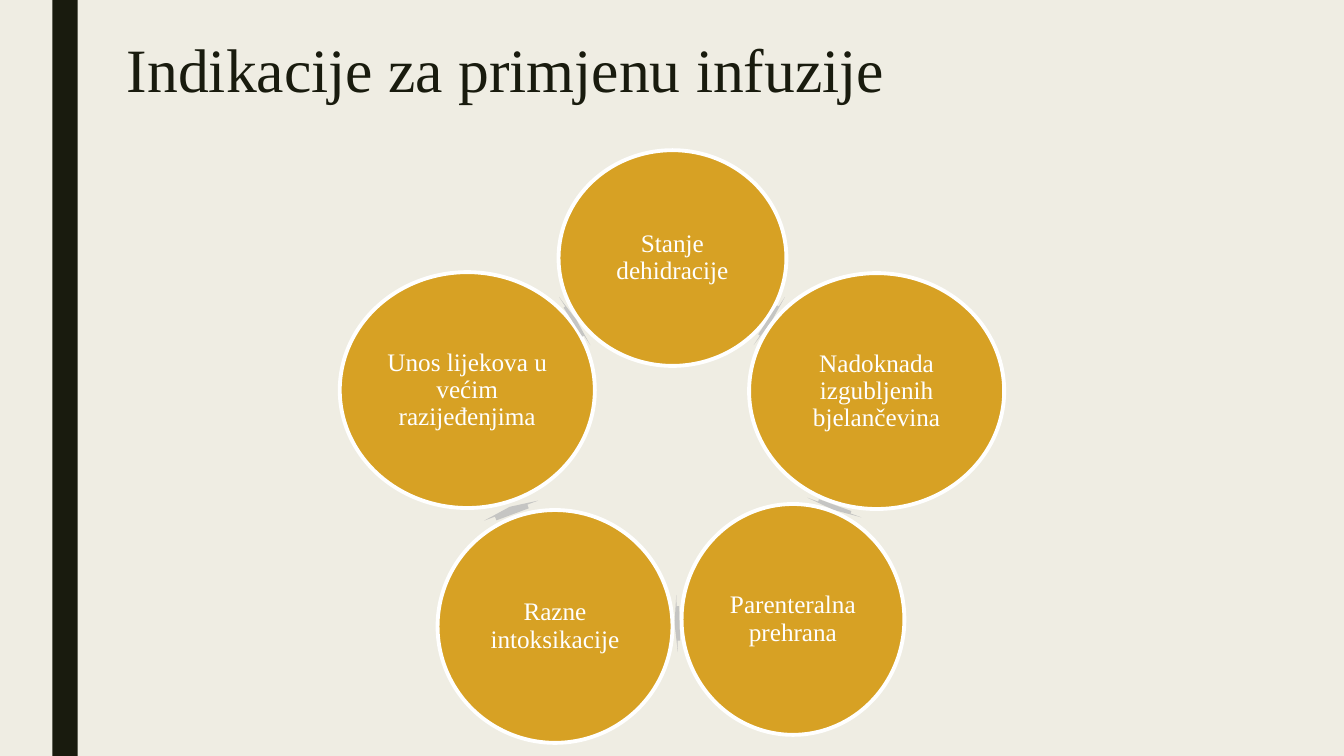
from pptx import Presentation
from pptx.dml.color import RGBColor
from pptx.enum.shapes import MSO_SHAPE as Shape
from pptx.enum.text import MSO_ANCHOR as Anchor, PP_ALIGN as Align
from pptx.util import Inches, Pt

COLORS = {"paper": "EFEDE3", "ink": "191B0E", "gold": "D7A124",
          "white": "FFFFFF", "arrow": "C5C5C3"}
FONT = "Times New Roman"


def add_filled(kind, box, color):
    shape = slide.shapes.add_shape(kind, *map(Inches, box))
    shape.shadow.inherit = False
    shape.fill.solid()
    shape.fill.fore_color.rgb = RGBColor.from_string(COLORS[color])
    shape.line.fill.background()
    return shape


def write(frame, text, size, color, spacing, align, frame_format):
    for name, value in frame_format.items():
        setattr(frame, name, value)
    paragraph = frame.paragraphs[0]
    paragraph.text = text
    paragraph.alignment = align
    paragraph.line_spacing = spacing
    font = paragraph.runs[0].font
    font.name, font.size = FONT, Pt(size)
    font.color.rgb = RGBColor.from_string(COLORS[color])


prs = Presentation()
prs.slide_width, prs.slide_height = Inches(13.33), Inches(7.5)
slide = prs.slides.add_slide(prs.slide_layouts[6])

# Background and side band
slide.background.fill.solid()
slide.background.fill.fore_color.rgb = RGBColor.from_string(COLORS["paper"])
add_filled(Shape.RECTANGLE, (0.52, 0, 0.25, 7.5), "ink")

# Title
title = slide.shapes.add_textbox(*map(Inches, (1.16, 0.35, 10.5, 1.25)))
write(title.text_frame, "Indikacije za primjenu infuzije", 44, "ink", 0.89,
      Align.LEFT, {"word_wrap": True, "vertical_anchor": Anchor.TOP})

# Cycle: each indication, its circle, and the arrow to the next one
indications = [
    ("Stanje dehidracije", (5.54, 1.49, 2.26, 2.14), (7.61, 2.9, 0.04, 0.57), 33),
    ("Nadoknada izgubljenih bjelančevina", (7.43, 2.71, 2.53, 2.34), (8.25, 4.75, 0.05, 0.57), 110),
    ("Parenteralna prehrana", (6.76, 5, 2.21, 2.29), (6.69, 5.9, 0.05, 0.57), 178.4),
    ("Razne intoksikacije", (4.34, 5.06, 2.33, 2.31), (5.03, 4.78, 0.08, 0.57), 249.6),
    ("Unos lijekova u većim razijeđenjima", (3.37, 2.7, 2.53, 2.34), (5.68, 2.9, 0.04, 0.57), 327),
]
circle_format = {"word_wrap": True, "vertical_anchor": Anchor.MIDDLE}
for side in ("left", "top", "right", "bottom"):
    circle_format[f"margin_{side}"] = Inches(0.03)

for indication, circle_box, arrow_box, angle in indications:
    circle = add_filled(Shape.OVAL, circle_box, "gold")
    circle.line.color.rgb = RGBColor.from_string(COLORS["white"])
    circle.line.width = Pt(2.75)
    write(circle.text_frame, indication, 18, "white", 0.9, Align.CENTER, circle_format)

    arrow = add_filled(Shape.RIGHT_ARROW, arrow_box, "arrow")
    arrow.adjustments[0] = 0.6
    arrow.rotation = angle

prs.save("out.pptx")
